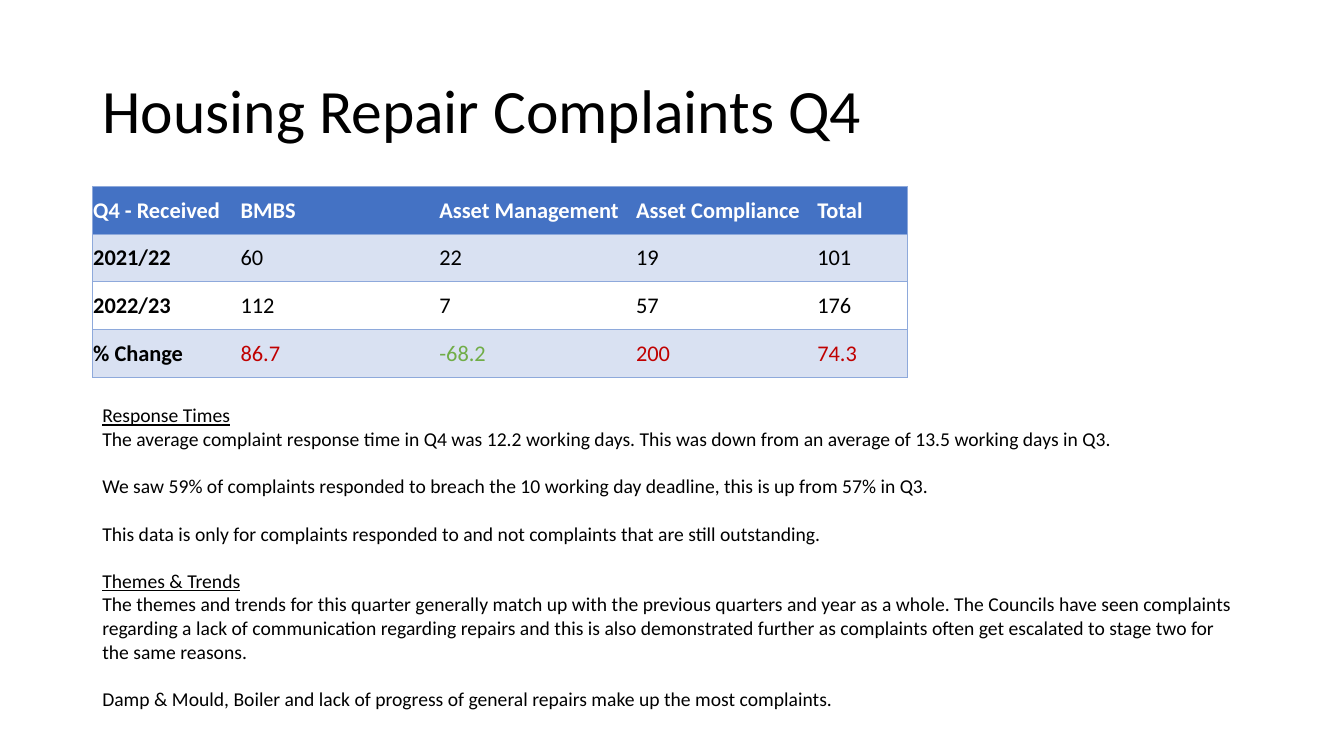
from lxml import etree
from pptx import Presentation
from pptx.dml.color import RGBColor
from pptx.enum import text as t
from pptx.oxml import ns
from pptx.util import Pt

# Content
TITLE = "Housing Repair Complaints Q4"
COMPLAINTS = [
    ("Q4 - Received", "BMBS", "Asset Management", "Asset Compliance", "Total"),
    ("2021/22", "60", "22", "19", "101"),
    ("2022/23", "112", "7", "57", "176"),
    ("% Change", "86.7", "-68.2", "200", "74.3"),
]
SECTIONS = [
    ("Response Times", [
        "The average complaint response time in Q4 was 12.2 working days. "
        "This was down from an average of 13.5 working days in Q3.",
        "We saw 59% of complaints responded to breach the 10 working day deadline, "
        "this is up from 57% in Q3.",
        "This data is only for complaints responded to and not complaints that are "
        "still outstanding.",
    ]),
    ("Themes & Trends", [
        "The themes and trends for this quarter generally match up with the previous "
        "quarters and year as a whole. The Councils have seen complaints regarding a "
        "lack of communication regarding repairs and this is also demonstrated further "
        "as complaints often get escalated to stage two for the same reasons.",
        "Damp & Mould, Boiler and lack of progress of general repairs make up the most "
        "complaints.",
    ]),
]

# Format
FONT = "Calibri"
BLACK = RGBColor(0x00, 0x00, 0x00)
WHITE = RGBColor(0xFF, 0xFF, 0xFF)
BLUE = RGBColor(0x44, 0x72, 0xC4)
PALE_BLUE = RGBColor(0xD9, 0xE1, 0xF2)
BORDER = RGBColor(0x8E, 0xA9, 0xDB)
RED = RGBColor(0xC0, 0x00, 0x00)
GREEN = RGBColor(0x70, 0xAD, 0x47)
ROW_FILLS = [BLUE, PALE_BLUE, None, PALE_BLUE]
COLUMN_WIDTHS = [105.3, 142, 140.5, 129.5, 65]
ROW_HEIGHT = 34.1
LEFT, CONTENT_WIDTH = 66, 828
TABLE_TOP, NOTES_TOP, NOTES_HEIGHT = 133, 284.5, 227.5
PARAGRAPH_GAP = 17
CELL_FORMAT = {
    "margin_left": Pt(0.6), "margin_right": Pt(0.6), "margin_top": Pt(0.6),
    "margin_bottom": 0, "vertical_anchor": t.MSO_ANCHOR.MIDDLE,
}


def format_paragraph(paragraph, size, color=BLACK, **extra):
    values = {"name": FONT, "size": Pt(size), **extra}
    for name, value in values.items():
        setattr(paragraph.font, name, value)
    paragraph.font.color.rgb = color


def draw_border(cell, side, visible):
    properties = cell._tc.get_or_add_tcPr()
    line = etree.SubElement(properties, ns.qn("a:ln" + side), w=str(Pt(0.5)))
    if visible:
        fill = etree.SubElement(line, ns.qn("a:solidFill"))
        etree.SubElement(fill, ns.qn("a:srgbClr"), val=str(BORDER))
    else:
        etree.SubElement(line, ns.qn("a:noFill"))


def value_color(row, column, value):
    if row == 0:
        return WHITE
    if row == len(COMPLAINTS) - 1 and column > 0:
        return GREEN if value.startswith("-") else RED
    return BLACK


def add_title(slide):
    title = slide.shapes.title
    title.left, title.top = Pt(LEFT), Pt(28.75)
    title.width, title.height = Pt(CONTENT_WIDTH), Pt(104.4)
    title.text_frame.text = TITLE
    title.text_frame.vertical_anchor = t.MSO_ANCHOR.MIDDLE
    paragraph = title.text_frame.paragraphs[0]
    paragraph.alignment = t.PP_ALIGN.LEFT
    paragraph.line_spacing = 0.9
    format_paragraph(paragraph, 44)


def add_complaints_table(slide):
    rows, columns = len(COMPLAINTS), len(COLUMN_WIDTHS)
    table = slide.shapes.add_table(
        rows, columns, Pt(LEFT), Pt(TABLE_TOP),
        Pt(sum(COLUMN_WIDTHS)), Pt(rows * ROW_HEIGHT)).table
    table.horz_banding = False
    for column, width in zip(table.columns, COLUMN_WIDTHS):
        column.width = Pt(width)
    for r, values in enumerate(COMPLAINTS):
        table.rows[r].height = Pt(ROW_HEIGHT)
        for c, value in enumerate(values):
            cell = table.cell(r, c)
            cell.text = value
            for name, setting in CELL_FORMAT.items():
                setattr(cell, name, setting)
            format_paragraph(cell.text_frame.paragraphs[0], 16,
                             value_color(r, c, value), bold=r == 0 or c == 0)
            # Borders frame the table and separate its rows
            visible = {"L": c == 0, "R": c == columns - 1, "T": True, "B": True}
            for side, shown in visible.items():
                draw_border(cell, side, shown)
            if ROW_FILLS[r] is None:
                cell.fill.background()
            else:
                cell.fill.solid()
                cell.fill.fore_color.rgb = ROW_FILLS[r]


def add_notes_text(slide):
    frame = slide.shapes.add_textbox(
        Pt(LEFT), Pt(NOTES_TOP), Pt(CONTENT_WIDTH), Pt(NOTES_HEIGHT)).text_frame
    frame.word_wrap = True
    lines = [(line, line == heading) for heading, body in SECTIONS
             for line in [heading, *body]]
    for index, (line, is_heading) in enumerate(lines):
        paragraph = frame.add_paragraph() if index else frame.paragraphs[0]
        paragraph.text = line
        is_last = index == len(lines) - 1
        paragraph.space_after = Pt(0 if is_heading or is_last else PARAGRAPH_GAP)
        format_paragraph(paragraph, 14, underline=is_heading)


def main():
    presentation = Presentation()
    presentation.slide_width, presentation.slide_height = Pt(960), Pt(540)
    title_only = presentation.slide_layouts[5]
    slide = presentation.slides.add_slide(title_only)
    add_title(slide)
    add_notes_text(slide)
    add_complaints_table(slide)
    presentation.save("out.pptx")


if __name__ == "__main__":
    main()
